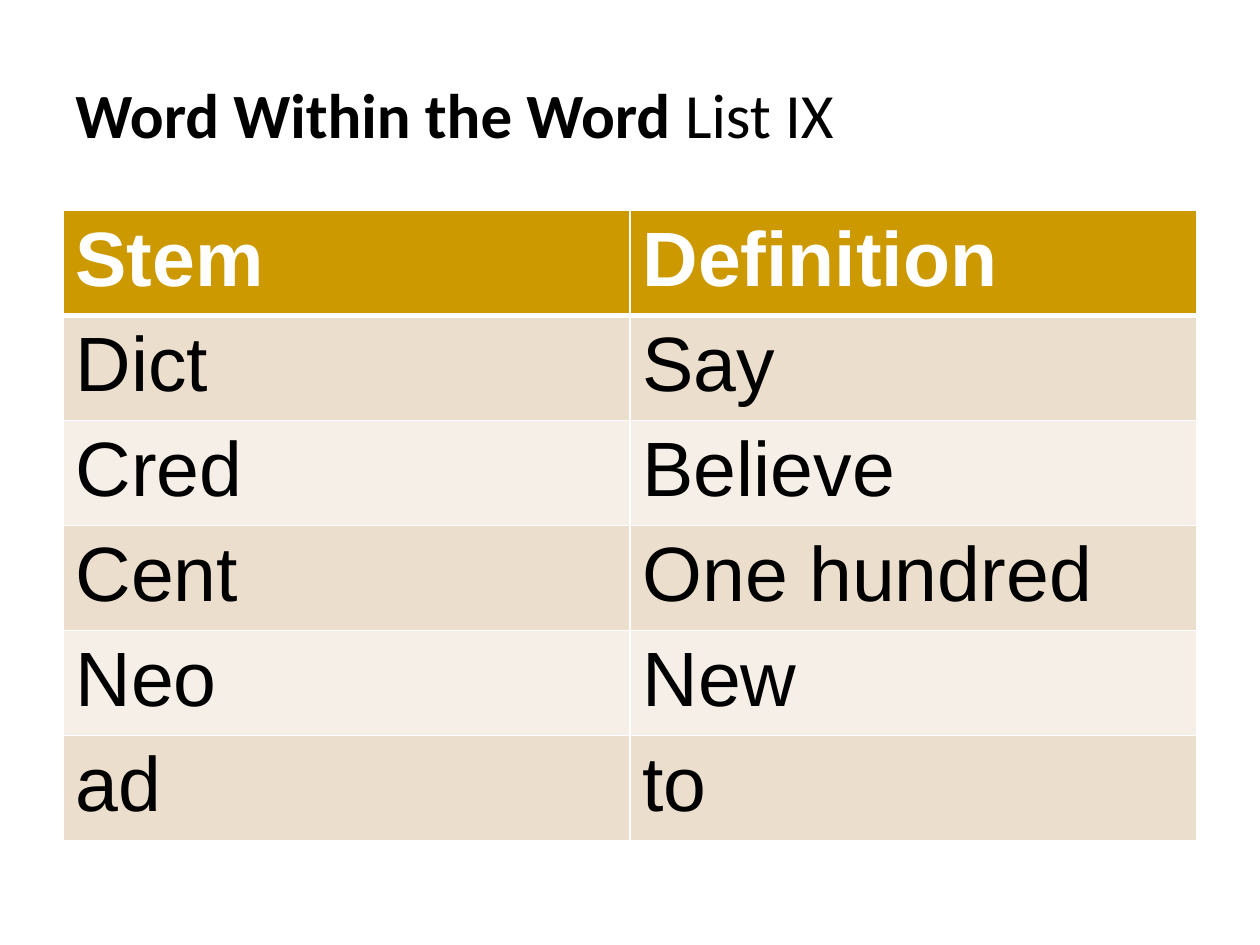
from lxml import etree
from pptx import Presentation
from pptx.dml.color import RGBColor
from pptx.enum.text import MSO_ANCHOR
from pptx.oxml.ns import qn
from pptx.util import Cm, Pt

BOTTOM = MSO_ANCHOR.BOTTOM

TITLE = [("Word Within the Word ", True), ("List IX", False)]
ROWS = [
    ("Stem", "Definition"),
    ("Dict", "Say"),
    ("Cred", "Believe"),
    ("Cent", "One hundred"),
    ("Neo", "New"),
    ("ad", "to"),
]
COLORS = {
    "text": "000000",
    "header_text": "FFFFFF",
    "header": "CC9900",
    "odd_row": "ECDECC",
    "even_row": "F6EFE7",
    "border": "FFFFFF",
}
LEFT = Cm(1.27)
COLUMN_WIDTH, ROW_HEIGHT = Cm(11.43), Cm(1.8)


def style_font(font, name, size, color, bold):
    font.name = name
    font.size = Pt(size)
    font.bold = bold
    font.color.rgb = RGBColor.from_string(COLORS[color])


def add_borders(cell, top, bottom):
    """Draw all four cell borders; top and bottom are widths in points."""
    properties = cell._tc.get_or_add_tcPr()
    for side, width in (("L", 1), ("R", 1), ("T", top), ("B", bottom)):
        line = etree.SubElement(properties, qn(f"a:ln{side}"), w=str(Pt(width)))
        fill = etree.SubElement(line, qn("a:solidFill"))
        etree.SubElement(fill, qn("a:srgbClr"), val=COLORS["border"])


def add_title(slide):
    box = slide.shapes.add_textbox(LEFT, Cm(0.2), Cm(21.59), Cm(2.97))
    frame = box.text_frame
    frame.word_wrap = True
    frame.vertical_anchor = BOTTOM
    for text, bold in TITLE:
        span = frame.paragraphs[0].add_run()
        span.text = text
        style_font(span.font, "Calibri", 36, "text", bold)


def add_stem_table(slide):
    columns = len(ROWS[0])
    table = slide.shapes.add_table(
        len(ROWS), columns, LEFT, Cm(4.24),
        COLUMN_WIDTH * columns, ROW_HEIGHT * len(ROWS),
    ).table
    for r, words in enumerate(ROWS):
        is_header = r == 0
        fill = "header" if is_header else "odd_row" if r % 2 else "even_row"
        for c, word in enumerate(words):
            cell = table.cell(r, c)
            add_borders(cell, top=3 if r == 1 else 1, bottom=3 if is_header else 1)
            cell.fill.solid()
            cell.fill.fore_color.rgb = RGBColor.from_string(COLORS[fill])
            cell.text_frame.text = word
            style_font(cell.text_frame.paragraphs[0].runs[0].font, "Arial", 44,
                       "header_text" if is_header else "text", is_header)


def main():
    deck = Presentation()
    deck.slide_width, deck.slide_height = Cm(25.4), Cm(19.05)
    slide = deck.slides.add_slide(deck.slide_layouts[6])
    add_title(slide)
    add_stem_table(slide)
    deck.save("out.pptx")


if __name__ == "__main__":
    main()
